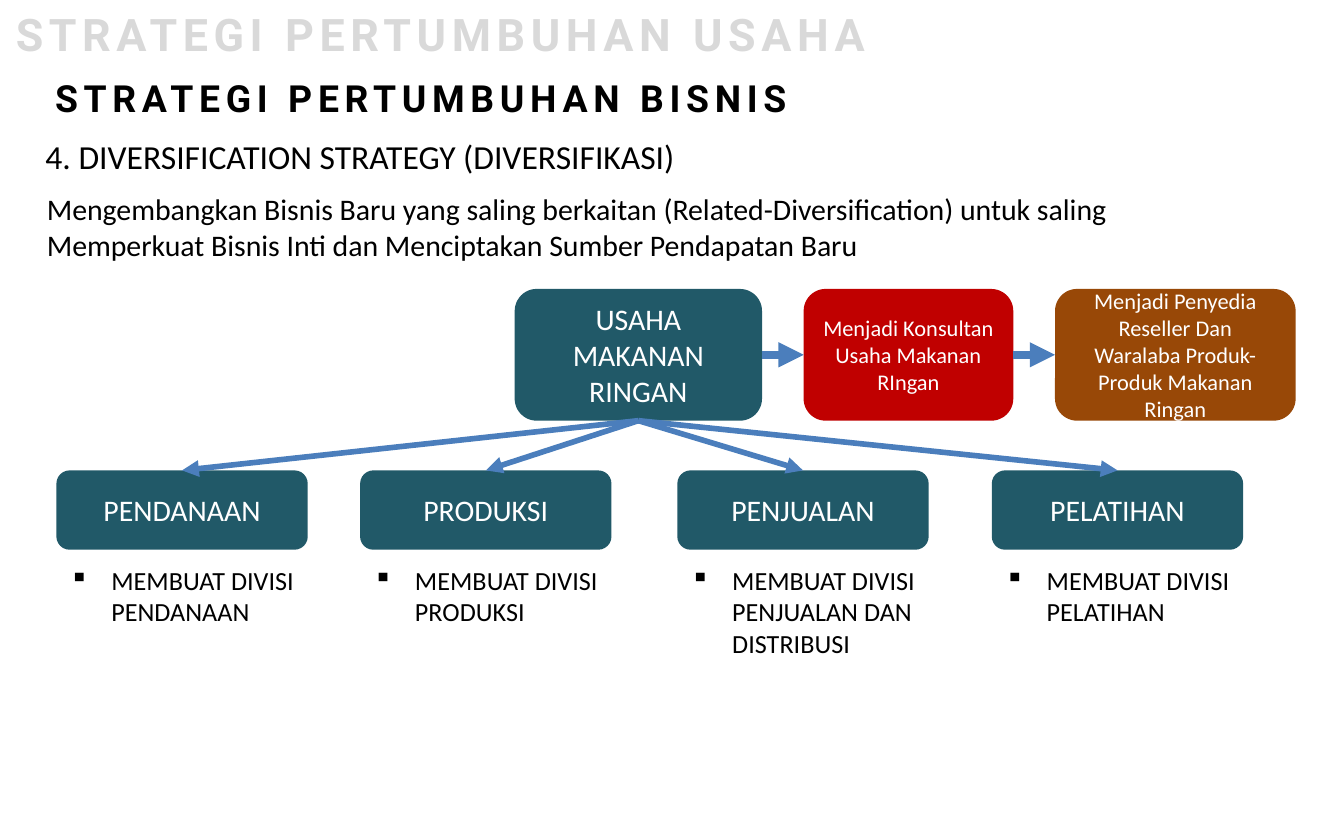
from pptx import Presentation
from pptx.dml.color import RGBColor
from pptx.enum.shapes import MSO_CONNECTOR, MSO_SHAPE
from pptx.enum.text import MSO_ANCHOR, MSO_AUTO_SIZE, PP_ALIGN
from pptx.oxml.ns import qn
from pptx.util import Inches, Pt
from lxml import etree

ROUNDED = MSO_SHAPE.ROUNDED_RECTANGLE
STRAIGHT = MSO_CONNECTOR.STRAIGHT
TOP, MIDDLE = MSO_ANCHOR.TOP, MSO_ANCHOR.MIDDLE
LEFT, CENTER = PP_ALIGN.LEFT, PP_ALIGN.CENTER
GROW, FIXED = MSO_AUTO_SIZE.SHAPE_TO_FIT_TEXT, MSO_AUTO_SIZE.NONE
SITE_TOP, SITE_LEFT, SITE_BOTTOM, SITE_RIGHT = range(4)

TEAL, RED, BROWN = "215968", "C00000", "984807"
BLUE, GREY, BLACK, WHITE = "4B7EBC", "D9D9D9", "000000", "FFFFFF"


def color(value):
    return RGBColor.from_string(value)


def write_text(shape, text, size, font_color=BLACK, font="Calibri",
               align=LEFT, anchor=TOP, fit=GROW, wrap=True):
    frame = shape.text_frame
    frame.word_wrap = wrap
    frame.auto_size = fit
    frame.vertical_anchor = anchor
    paragraph = frame.paragraphs[0]
    paragraph.alignment = align
    run = paragraph.add_run()
    run.text = text
    run.font.name = font
    run.font.size = Pt(size)
    run.font.color.rgb = color(font_color)
    if font == "Roboto":
        run.font.bold = True
        run._r.get_or_add_rPr().set("spc", "300")
    return paragraph


presentation = Presentation()
presentation.slide_width = Inches(10)
presentation.slide_height = Inches(6.25)
slide = presentation.slides.add_slide(presentation.slide_layouts[5])
shapes = slide.shapes

# Title
title = shapes.title
title.left, title.top = Inches(0.31), Inches(0.51)
title.width, title.height = Inches(9.42), Inches(0.44)
write_text(title, "STRATEGI PERTUMBUHAN BISNIS", 20, font="Roboto")

# Chapter heading, strategy name and explanation
heading = shapes.add_textbox(Inches(0.02), Inches(0), Inches(10), Inches(0.5))
write_text(heading, "STRATEGI PERTUMBUHAN USAHA", 24, GREY, "Roboto")
strategy = shapes.add_textbox(Inches(0.24), Inches(0.96), Inches(4.93), Inches(0.4))
write_text(strategy, "4. DIVERSIFICATION STRATEGY (DIVERSIFIKASI)", 18, wrap=False)
explanation = shapes.add_textbox(Inches(0.25), Inches(1.37), Inches(9.25), Inches(0.64))
write_text(explanation, "Mengembangkan Bisnis Baru yang saling berkaitan "
           "(Related-Diversification) untuk saling Memperkuat Bisnis Inti "
           "dan Menciptakan Sumber Pendapatan Baru", 16)

# Boxes: the business chain above, its divisions below
BUSINESS_TOP, BUSINESS_HEIGHT = 2.15, 0.98
DIVISION_TOP, DIVISION_WIDTH, DIVISION_HEIGHT = 3.5, 1.87, 0.59
businesses = [
    (3.83, 1.84, TEAL, 16, "USAHA MAKANAN RINGAN"),
    (5.98, 1.56, RED, 12, "Menjadi Konsultan Usaha Makanan RIngan"),
    (7.85, 1.79, BROWN, 12,
     "Menjadi Penyedia Reseller Dan Waralaba Produk-Produk Makanan Ringan"),
]
divisions = [
    (0.42, "PENDANAAN", "MEMBUAT DIVISI PENDANAAN"),
    (2.68, "PRODUKSI", "MEMBUAT DIVISI PRODUKSI"),
    (5.04, "PENJUALAN", "MEMBUAT DIVISI PENJUALAN DAN DISTRIBUSI"),
    (7.38, "PELATIHAN", "MEMBUAT DIVISI PELATIHAN"),
]
box_rows = [(left, BUSINESS_TOP, width, BUSINESS_HEIGHT, fill, size, text)
            for left, width, fill, size, text in businesses]
box_rows += [(left, DIVISION_TOP, DIVISION_WIDTH, DIVISION_HEIGHT, TEAL, 16, name)
             for left, name, task in divisions]
boxes = []
for left, top, width, height, fill, size, text in box_rows:
    box = shapes.add_shape(ROUNDED, Inches(left), Inches(top),
                           Inches(width), Inches(height))
    box.shadow.inherit = False
    box.fill.solid()
    box.fill.fore_color.rgb = color(fill)
    box.line.fill.background()
    write_text(box, text, size, WHITE, align=CENTER, anchor=MIDDLE, fit=FIXED)
    boxes.append(box)
core, consultant, supplier, *division_boxes = boxes

# Bulleted task under each division
for left, name, task in divisions:
    task_box = shapes.add_textbox(Inches(left), Inches(4.15),
                                  Inches(DIVISION_WIDTH), Inches(0.57))
    properties = write_text(task_box, task, 14)._p.get_or_add_pPr()
    properties.set("marL", str(Inches(0.31)))
    properties.set("indent", str(-Inches(0.31)))
    etree.SubElement(properties, qn("a:buChar")).set("char", "▪")

# Arrows along the chain and down to the divisions
arrows = [(core, SITE_RIGHT, consultant, SITE_LEFT, 4.5),
          (consultant, SITE_RIGHT, supplier, SITE_LEFT, 4.5)]
arrows += [(core, SITE_BOTTOM, box, SITE_TOP, 3) for box in division_boxes]
for source, source_site, target, target_site, width in arrows:
    arrow = shapes.add_connector(STRAIGHT, 0, 0, 0, 0)
    arrow.begin_connect(source, source_site)
    arrow.end_connect(target, target_site)
    arrow.line.color.rgb = color(BLUE)
    arrow.line.width = Pt(width)
    etree.SubElement(arrow.line._get_or_add_ln(), qn("a:tailEnd")).set("type", "triangle")
    etree.SubElement(arrow._element.spPr, qn("a:effectLst"))

presentation.save("out.pptx")
